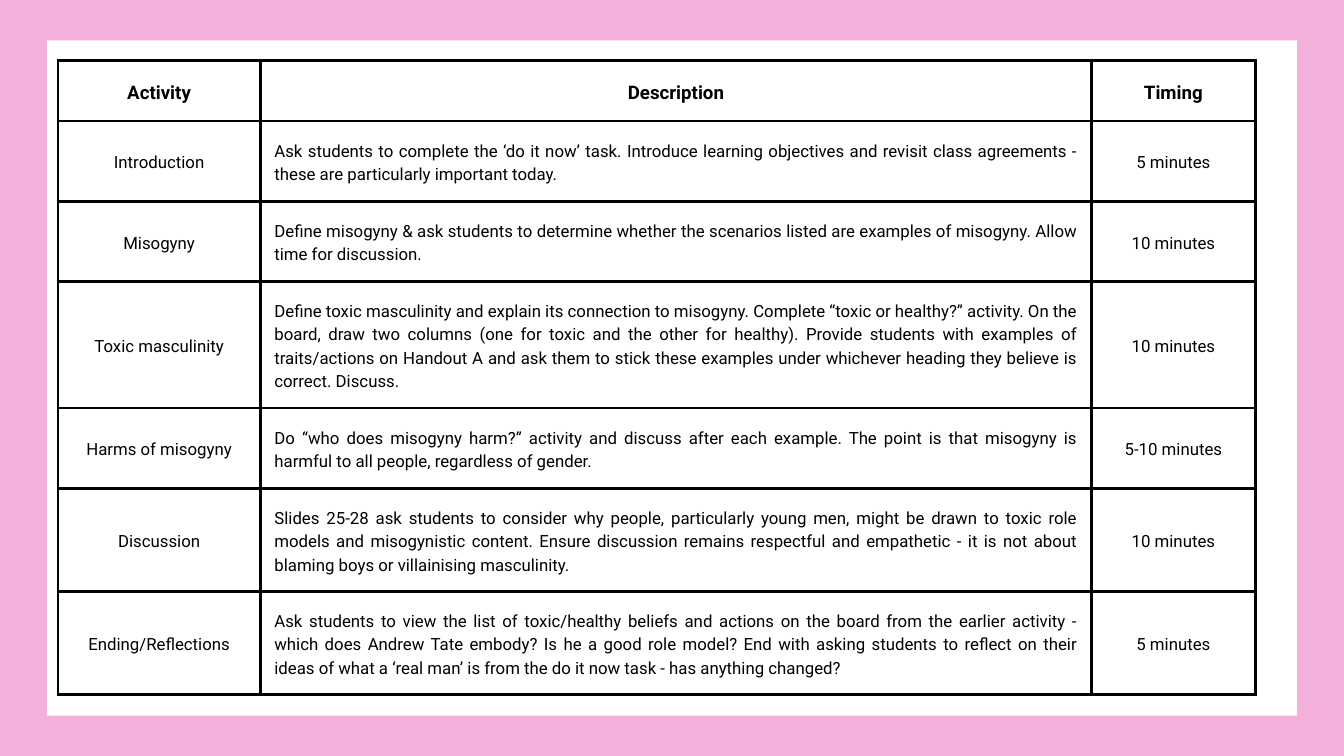
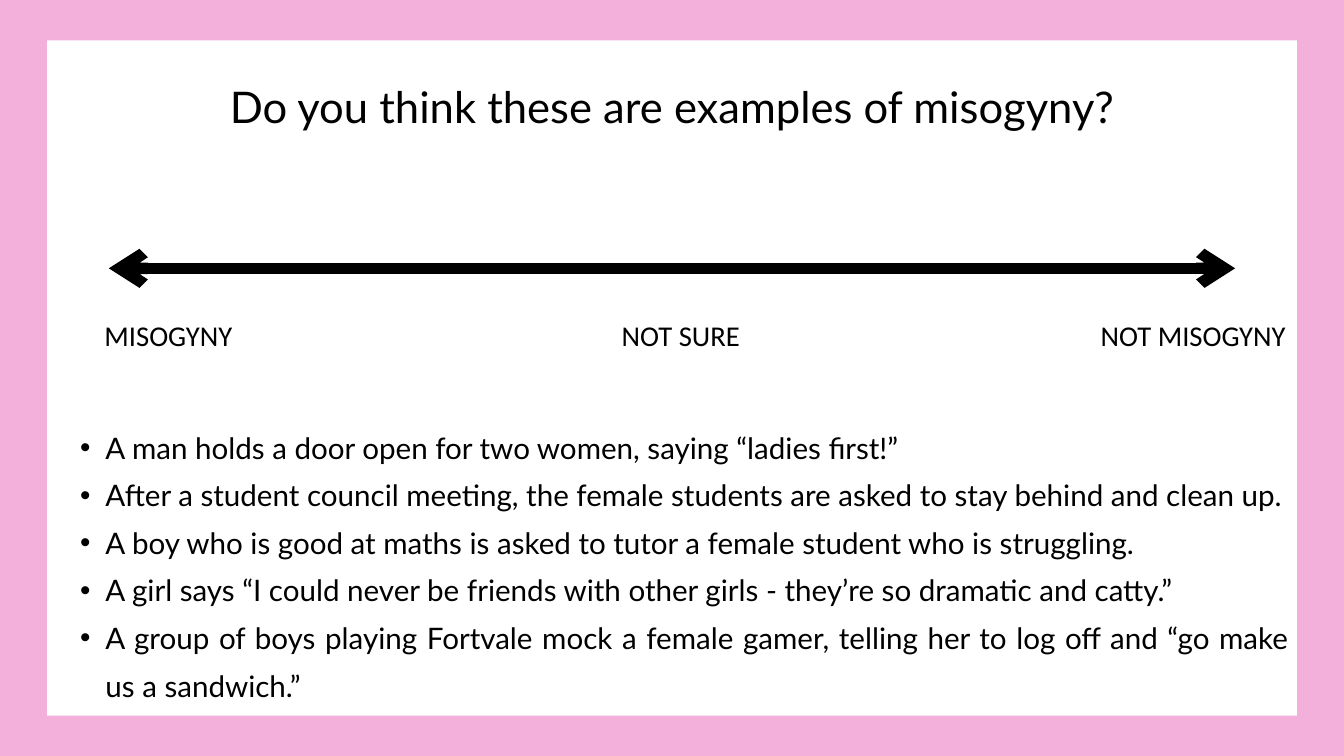
from lxml.etree import SubElement
from pptx import Presentation
from pptx.dml.color import RGBColor
from pptx.enum.shapes import MSO_CONNECTOR, MSO_SHAPE
from pptx.enum.text import MSO_ANCHOR, PP_ALIGN
from pptx.oxml.ns import qn
from pptx.util import Pt

PINK, WHITE, BLACK = "F3B0DB", "FFFFFF", "000000"
CENTER, JUSTIFY = PP_ALIGN.CENTER, PP_ALIGN.JUSTIFY


def color(fmt, code):
    fmt.rgb = RGBColor.from_string(code)


def write(frame, text, font="Lato", size=18, bold=False, align=CENTER,
          line=25.2, pad=0, indent=0, hang=0):
    """Fill a text frame, one paragraph per line; a hang adds bullets."""
    frame.word_wrap = True
    frame.margin_left = frame.margin_right = Pt(pad)
    frame.margin_top = frame.margin_bottom = Pt(pad)
    for i, part in enumerate(text.split("\n")):
        para = frame.add_paragraph() if i else frame.paragraphs[0]
        para.alignment = align
        para.line_spacing = Pt(line)
        if hang:
            props = para._p.get_or_add_pPr()
            props.set("marL", str(Pt(indent)))
            props.set("indent", str(-Pt(hang)))
            SubElement(props, qn("a:buFont"), typeface="Arial")
            SubElement(props, qn("a:buChar"), char="•")
        run = para.add_run()
        run.text = part
        run.font.name, run.font.size, run.font.bold = font, Pt(size), bold
        color(run.font.color, BLACK)


deck = Presentation()
deck.slide_width, deck.slide_height = Pt(1440), Pt(810)

# Pink border around a white panel on every slide
back = deck.slide_master.background.fill
back.solid()
color(back.fore_color, PINK)
slides = []
for _ in range(2):
    slide = deck.slides.add_slide(deck.slide_layouts[6])
    panel = slide.shapes.add_shape(
        MSO_SHAPE.RECTANGLE, Pt(50.4), Pt(43.2), Pt(1339.2), Pt(723.6))
    panel.shadow.inherit = False
    panel.fill.solid()
    color(panel.fill.fore_color, WHITE)
    panel.line.fill.background()
    slides.append(slide)
plan, quiz = slides

# Slide 1: lesson plan table
rows = [
    ("Activity", "Description", "Timing"),
    ("Introduction",
     "Ask students to complete the ‘do it now’ task. Introduce learning "
     "objectives and revisit class agreements - these are particularly "
     "important today.", "5 minutes"),
    ("Misogyny",
     "Define misogyny & ask students to determine whether the scenarios "
     "listed are examples of misogyny. Allow time for discussion.",
     "10 minutes"),
    ("Toxic masculinity",
     "Define toxic masculinity and explain its connection to misogyny. "
     "Complete “toxic or healthy?” activity. On the board, draw two columns "
     "(one for toxic and the other for healthy). Provide students with "
     "examples of traits/actions on Handout A and ask them to stick these "
     "examples under whichever heading they believe is correct. Discuss.",
     "10 minutes"),
    ("Harms of misogyny",
     "Do “who does misogyny harm?” activity and discuss after each example. "
     "The point is that misogyny is harmful to all people, regardless of "
     "gender.", "5-10 minutes"),
    ("Discussion",
     "Slides 25-28 ask students to consider why people, particularly young "
     "men, might be drawn to toxic role models and misogynistic content. "
     "Ensure discussion remains respectful and empathetic - it is not about "
     "blaming boys or villainising masculinity.", "10 minutes"),
    ("Ending/Reflections",
     "Ask students to view the list of toxic/healthy beliefs and actions on "
     "the board from the earlier activity - which does Andrew Tate embody? "
     "Is he a good role model? End with asking students to reflect on their "
     "ideas of what a ‘real man’ is from the do it now task - has anything "
     "changed?", "5 minutes"),
]
wides = [217, 890.5, 175.5]
highs = [65, 86, 86, 135.5, 86, 110.5, 110.5]
table = plan.shapes.add_table(
    len(rows), len(wides), Pt(62), Pt(64.8),
    Pt(sum(wides)), Pt(sum(highs))).table
table.first_row = table.horz_banding = False
for col, wide in zip(table.columns, wides):
    col.width = Pt(wide)
for r, row in enumerate(rows):
    table.rows[r].height = Pt(highs[r])
    for c, text in enumerate(row):
        cell = table.cell(r, c)
        cell.vertical_anchor = MSO_ANCHOR.MIDDLE
        cell.margin_left = cell.margin_right = Pt(15)
        cell.margin_top = cell.margin_bottom = Pt(15)
        size = 18 if r else 20
        write(cell.text_frame, text, font="Roboto", size=size, bold=r == 0,
              align=JUSTIFY if r and c == 1 else CENTER,
              line=size * 1.4, pad=15)
        props = cell._tc.get_or_add_tcPr()
        for side in "LRTB":
            edge = SubElement(props, qn("a:ln" + side), w=str(Pt(3)))
            fill = SubElement(edge, qn("a:solidFill"))
            SubElement(fill, qn("a:srgbClr"), val=BLACK)
        cell.fill.background()

# Slide 2: title and scenarios
title = quiz.shapes.add_textbox(Pt(59), Pt(66.2), Pt(1322), Pt(75))
write(title.text_frame, "Do you think these are examples of misogyny?",
      size=46.7, line=75.1)
cases = quiz.shapes.add_textbox(Pt(59), Pt(447.3), Pt(1322), Pt(306))
write(cases.text_frame,
      "A man holds a door open for two women, saying “ladies first!”\n"
      "After a student council meeting, the female students are asked to "
      "stay behind and clean up.\n"
      "A boy who is good at maths is asked to tutor a female student who is "
      "struggling.\n"
      "A girl says “I could never be friends with other girls - they’re so "
      "dramatic and catty.”\n"
      "A group of boys playing Fortvale mock a female gamer, telling her to "
      "log off and “go make us a sandwich.”",
      size=31.7, align=JUSTIFY, line=51, indent=54, hang=27)

# Scale with an arrow at both ends
scale = quiz.shapes.add_connector(
    MSO_CONNECTOR.STRAIGHT, Pt(116.6), Pt(287.5), Pt(1323.4), Pt(287.5))
scale.line.width = Pt(12)
scale.line.fill.solid()
color(scale.line.fill.fore_color, BLACK)
for end in ("headEnd", "tailEnd"):
    SubElement(scale.line._get_or_add_ln(), qn("a:" + end), type="arrow")
SubElement(scale._element.spPr, qn("a:effectLst"))

# Evenly spaced labels under the scale
for i, text in enumerate(["MISOGYNY", "NOT SURE", "NOT MISOGYNY"]):
    label = quiz.shapes.add_textbox(
        Pt(81 + 549 * i), Pt(345), Pt(199), Pt(34.5))
    write(label.text_frame, text, font="Calibri", size=30.7, line=32.2)

deck.save("out.pptx")
